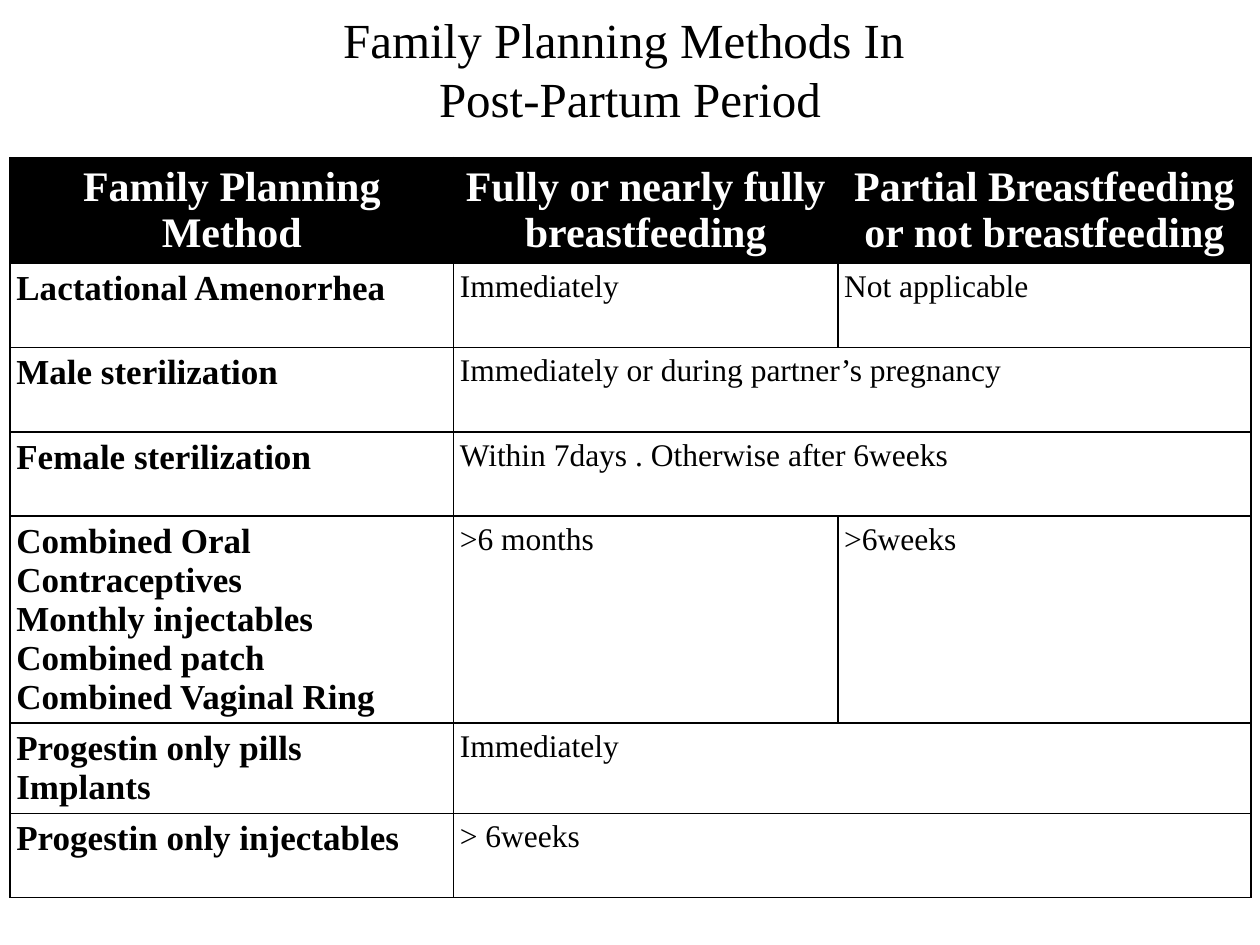
from copy import deepcopy

from lxml import etree
from pptx import Presentation
from pptx.dml.color import RGBColor
from pptx.enum.text import MSO_ANCHOR, PP_ALIGN
from pptx.oxml.ns import qn
from pptx.util import Inches, Pt

CENTER, LEFT = PP_ALIGN.CENTER, PP_ALIGN.LEFT
MIDDLE = MSO_ANCHOR.MIDDLE
BLACK = RGBColor(0x00, 0x00, 0x00)
WHITE = RGBColor(0xFF, 0xFF, 0xFF)
FONT = "Times New Roman"
MARGIN = Inches(0.05)
TITLE_ONLY = 5

TITLE = "Family Planning Methods In \vPost-Partum Period"
HEADER = [
    "Family Planning Method",
    "Fully or nearly fully breastfeeding",
    "Partial Breastfeeding or not breastfeeding",
]
# A row with a single timing spans both breastfeeding columns
METHODS = [
    ["Lactational Amenorrhea", "Immediately", "Not applicable"],
    ["Male sterilization", "Immediately or during partner’s pregnancy"],
    ["Female sterilization", "Within 7days . Otherwise after 6weeks"],
    ["Combined Oral Contraceptives\nMonthly injectables\nCombined patch\n"
     "Combined Vaginal Ring", ">6 months", ">6weeks"],
    ["Progestin only pills\vImplants", "Immediately"],
    ["Progestin only injectables", "> 6weeks"],
]
COLUMN_WIDTHS = [3.52, 3.05, 3.28]
ROW_HEIGHT = 0.67
TALL_ROW, TALL_HEIGHT = 4, 1.27


def format_text(text_frame, size, color, bold=False, alignment=LEFT):
    for paragraph in text_frame.paragraphs:
        paragraph.alignment = alignment
        for run in paragraph.runs:
            run.font.name = FONT
            run.font.size = Pt(size)
            run.font.bold = bold
            run.font.color.rgb = color
        # Line breaks take the size of the text around them
        for line_break in paragraph._p.findall(qn("a:br")):
            line_break.append(deepcopy(paragraph.runs[0].font._element))


def set_margins(target):
    target.margin_left = target.margin_right = MARGIN
    target.margin_top = target.margin_bottom = MARGIN


def add_borders(cell):
    properties = cell._tc.get_or_add_tcPr()
    for side in ("lnL", "lnR", "lnT", "lnB"):
        line = etree.SubElement(properties, qn(f"a:{side}"), w=str(Pt(1)))
        fill = etree.SubElement(line, qn("a:solidFill"))
        etree.SubElement(fill, qn("a:srgbClr"), val=str(BLACK))


def add_title(slide):
    title = slide.shapes.title
    title.left, title.top = Inches(0.5), Inches(0)
    title.width, title.height = Inches(9), Inches(1.09)
    text_frame = title.text_frame
    text_frame.text = TITLE
    text_frame.word_wrap = True
    text_frame.vertical_anchor = MIDDLE
    set_margins(text_frame)
    format_text(text_frame, 28, BLACK, alignment=CENTER)


def fill_cell(cell, text, row, column):
    cell.text_frame.text = text
    if row == 0:
        format_text(cell.text_frame, 24, WHITE, True, CENTER)
    elif column == 0:
        format_text(cell.text_frame, 20, BLACK, True)
    else:
        format_text(cell.text_frame, 18, BLACK)


def add_methods_table(slide):
    rows = [HEADER] + METHODS
    frame = slide.shapes.add_table(
        len(rows), len(HEADER),
        Inches(0.08), Inches(1.25), Inches(9.84), Inches(5.31))
    table = frame.table
    table.first_row = table.horz_banding = False
    for column, width in zip(table.columns, COLUMN_WIDTHS):
        column.width = Inches(width)

    for row_index, texts in enumerate(rows):
        height = TALL_HEIGHT if row_index == TALL_ROW else ROW_HEIGHT
        table.rows[row_index].height = Inches(height)
        for cell in table.rows[row_index].cells:
            set_margins(cell)
            add_borders(cell)
            if row_index == 0:
                cell.fill.solid()
                cell.fill.fore_color.rgb = BLACK
            else:
                cell.fill.background()
        if len(texts) < len(HEADER):
            table.cell(row_index, 1).merge(table.cell(row_index, 2))
        for column_index, text in enumerate(texts):
            fill_cell(table.cell(row_index, column_index), text,
                      row_index, column_index)


def main():
    presentation = Presentation()
    presentation.slide_width = Inches(10)
    presentation.slide_height = Inches(7.5)
    slide = presentation.slides.add_slide(
        presentation.slide_layouts[TITLE_ONLY])
    add_title(slide)
    add_methods_table(slide)
    presentation.save("out.pptx")


if __name__ == "__main__":
    main()
